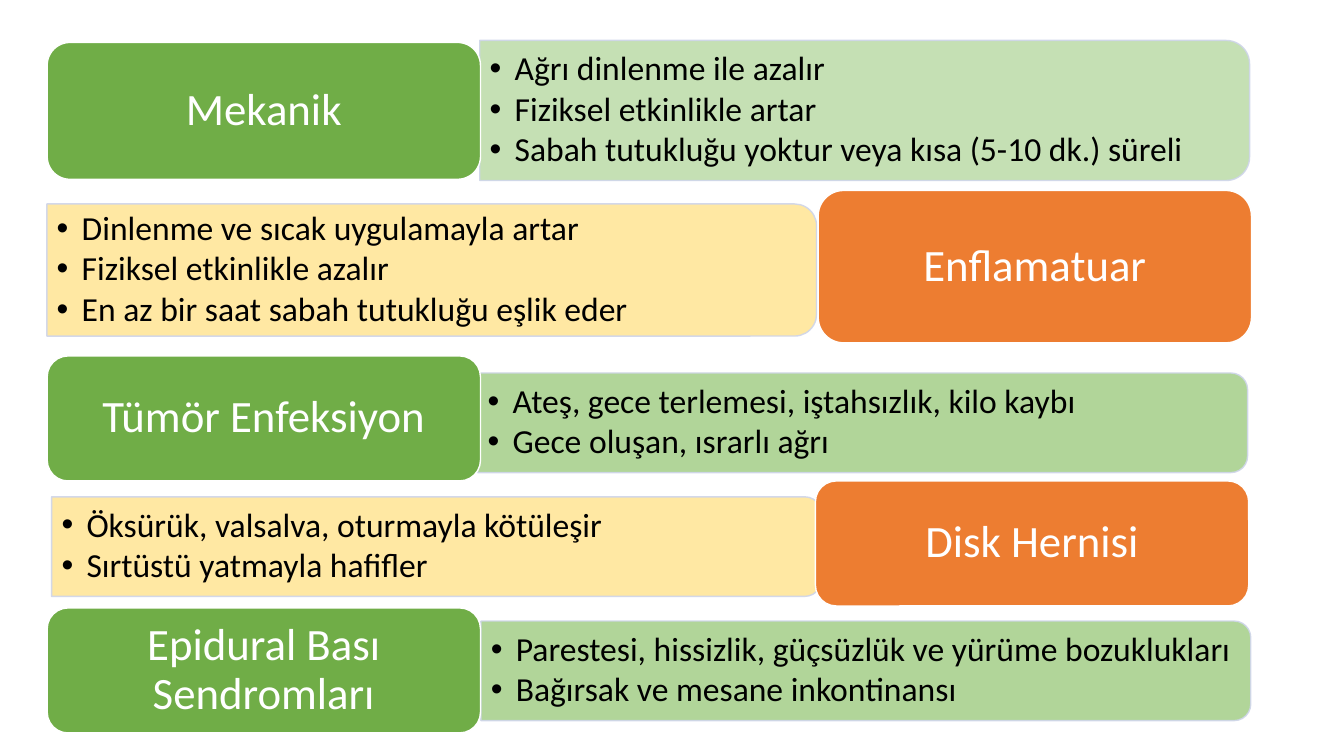
from lxml import etree
from pptx import Presentation
from pptx.dml.color import RGBColor
from pptx.enum import shapes, text
from pptx.oxml.ns import qn
from pptx.util import Cm, Pt

GREEN, ORANGE = "70AD47", "ED7D31"
PALE_GREEN, MID_GREEN, YELLOW = "C5E0B4", "A9D18E", "FFE699"
WHITE, BLACK, PANEL_EDGE = "FFFFFF", "000000", "CFD5EA"
FONT = "Calibri"
LABEL_WIDTH, PANEL_WIDTH = 10.92, 19.4
CORNER_INSET = 0.049  # share of the panel height kept clear of its round corners

# Label and panel places are (left, top, height) in centimetres.
ROWS = [
    dict(title="Mekanik", label=(1.19, 1.07, 3.45), label_fill=GREEN,
         panel=(12.09, 1.02, 3.53), panel_fill=PALE_GREEN, opacity=100,
         points=["Ağrı dinlenme ile azalır",
                 "Fiziksel etkinlikle artar",
                 "Sabah tutukluğu yoktur veya kısa (5-10 dk.) süreli"]),
    dict(title="Enflamatuar", label=(20.62, 4.8, 3.84), label_fill=ORANGE,
         panel=(1.18, 5.14, 3.33), panel_fill=YELLOW, opacity=90,
         points=["Dinlenme ve sıcak uygulamayla artar",
                 "Fiziksel etkinlikle azalır",
                 "En az bir saat sabah tutukluğu eşlik eder"]),
    dict(title="Tümör Enfeksiyon", label=(1.19, 8.97, 3.15), label_fill=GREEN,
         panel=(12.04, 9.4, 2.51), panel_fill=MID_GREEN, opacity=90,
         points=["Ateş, gece terlemesi, iştahsızlık, kilo kaybı",
                 "Gece oluşan, ısrarlı ağrı"]),
    dict(title="Disk Hernisi", label=(20.55, 12.12, 3.15), label_fill=ORANGE,
         panel=(1.3, 12.52, 2.51), panel_fill=YELLOW, opacity=90,
         points=["Öksürük, valsalva, oturmayla kötüleşir",
                 "Sırtüstü yatmayla hafifler"]),
    dict(title="Epidural Bası Sendromları", label=(1.19, 15.32, 3.15), label_fill=GREEN,
         panel=(12.12, 15.65, 2.51), panel_fill=MID_GREEN, opacity=90,
         points=["Parestesi, hissizlik, güçsüzlük ve yürüme bozuklukları",
                 "Bağırsak ve mesane inkontinansı"]),
]


def paint(color_format, color, opacity=100):
    color_format.rgb = RGBColor.from_string(color)


def set_opacity(shape, fill_opacity, line_opacity):
    line = shape.line._get_or_add_ln()
    for owner, percent in ((shape.fill._xPr, fill_opacity), (line, line_opacity)):
        if percent < 100:
            color = owner.find(qn("a:solidFill")).find(qn("a:srgbClr"))
            etree.SubElement(color, qn("a:alpha"), val=str(percent * 1000))


def add_block(page, kind, place, fill, edge):
    block = page.shapes.add_shape(kind, *map(Cm, place))
    block.shadow.inherit = False
    block.fill.solid()
    paint(block.fill.fore_color, fill)
    paint(block.line.color, edge)
    block.line.width = Pt(1)
    return block


def write(box, lines, size, color, alignment, space_after, margins):
    frame = box.text_frame
    frame.word_wrap = True
    frame.vertical_anchor = text.MSO_ANCHOR.MIDDLE
    frame.margin_left = frame.margin_right = Cm(margins[0])
    frame.margin_top = frame.margin_bottom = Cm(margins[1])
    frame.text = "\n".join(lines)
    for para in frame.paragraphs:
        para.alignment = alignment
        para.line_spacing = 0.9
        para.space_after = Pt(space_after)
        for span in para.runs:
            span.font.name = FONT
            span.font.size = Pt(size)
            paint(span.font.color, color)


def add_bullets(box):
    for para in box.text_frame.paragraphs:
        props = para._p.get_or_add_pPr()
        props.set("marL", str(Cm(0.63)))
        props.set("indent", str(-Cm(0.63)))
        etree.SubElement(props, qn("a:buFont"), typeface="Arial")
        etree.SubElement(props, qn("a:buChar"), char="•")


def add_panel(page, row):
    """Draw the pale panel, turned so that its round corners face right, and its points."""
    left, top, height = row["panel"]
    shift = (PANEL_WIDTH - height) / 2
    panel = add_block(page, shapes.MSO_SHAPE.ROUND_2_SAME_RECTANGLE,
                      (left + shift, top - shift, height, PANEL_WIDTH),
                      row["panel_fill"], PANEL_EDGE)
    panel.rotation = 90
    set_opacity(panel, row["opacity"], 90)

    inset = CORNER_INSET * height
    place = (left, top + inset, PANEL_WIDTH - inset, height - 2 * inset)
    box = page.shapes.add_textbox(*map(Cm, place))
    write(box, row["points"], 24, BLACK, text.PP_ALIGN.LEFT, 3, (0.25, 0.13))
    add_bullets(box)


def add_label(page, row):
    left, top, height = row["label"]
    label = add_block(page, shapes.MSO_SHAPE.ROUNDED_RECTANGLE,
                      (left, top, LABEL_WIDTH, height), row["label_fill"], WHITE)
    write(label, [row["title"]], 32, WHITE, text.PP_ALIGN.CENTER, 0, (0.33, 0.18))


def main():
    deck = Presentation()
    deck.slide_width, deck.slide_height = Cm(33.87), Cm(19.05)
    page = deck.slides.add_slide(deck.slide_layouts[6])
    for row in ROWS:
        add_panel(page, row)
        add_label(page, row)
    deck.save("out.pptx")


if __name__ == "__main__":
    main()
